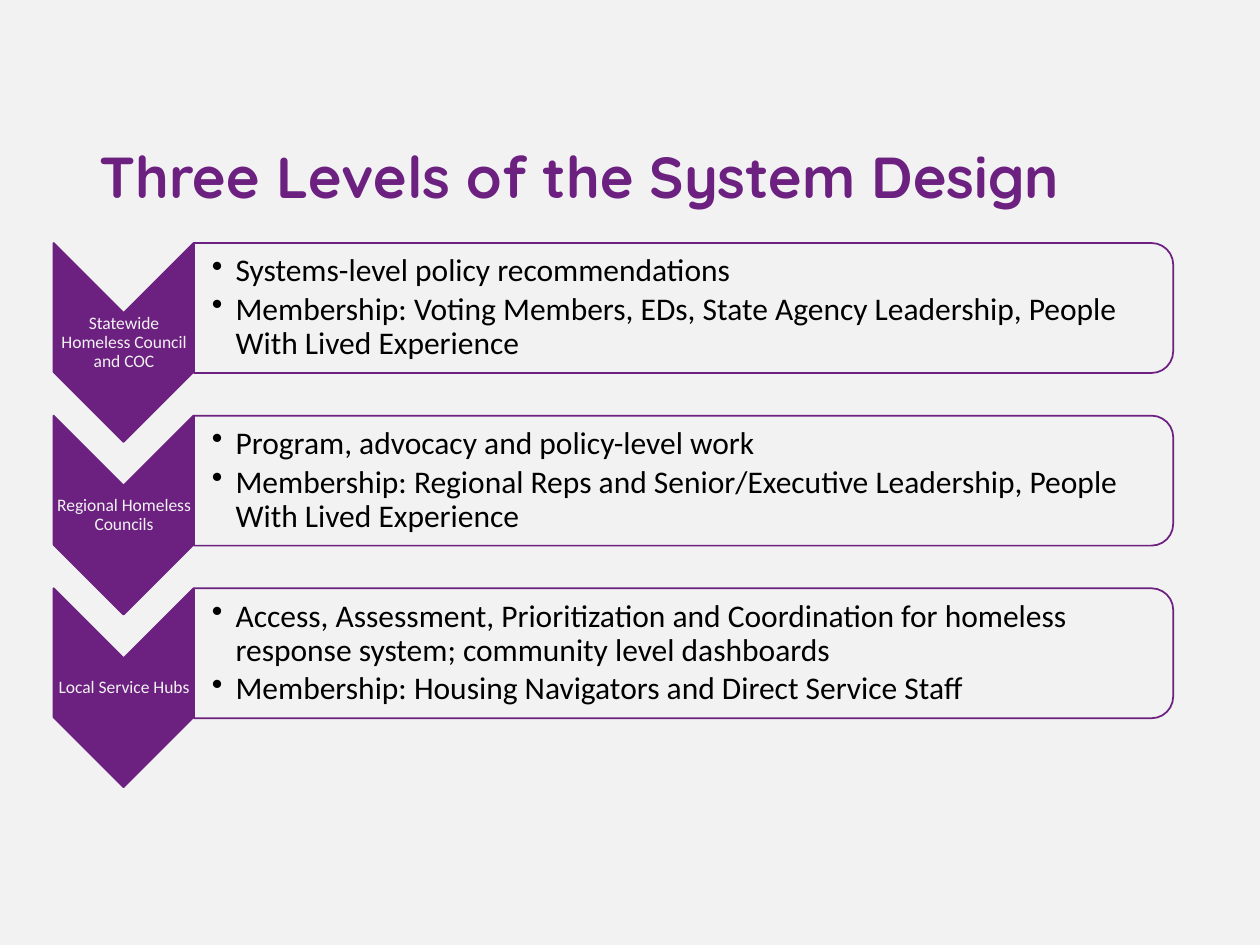
import pptx
import pptx.util
import pptx.dml.color
import pptx.enum.shapes
import pptx.enum.text
import pptx.oxml
import pptx.oxml.ns

Cm = pptx.util.Cm
Pt = pptx.util.Pt
RGB = pptx.dml.color.RGBColor
SHAPE = pptx.enum.shapes.MSO_SHAPE
ALIGN = pptx.enum.text.PP_ALIGN
ANCHOR = pptx.enum.text.MSO_ANCHOR

PURPLE = RGB(0x6C, 0x20, 0x80)
PALE = RGB(0xF2, 0xF2, 0xF2)
BLACK = RGB(0, 0, 0)

LEVELS = [
    ("Statewide Homeless Council and COC",
     ["Systems-level policy recommendations",
      "Membership: Voting Members, EDs, State Agency Leadership, "
      "People With Lived Experience"]),
    ("Regional Homeless Councils",
     ["Program, advocacy and policy-level work",
      "Membership: Regional Reps and Senior/Executive Leadership, "
      "People With Lived Experience"]),
    ("Local Service Hubs",
     ["Access, Assessment, Prioritization and Coordination for homeless "
      "response system; community level dashboards",
      "Membership: Housing Navigators and Direct Service Staff"]),
]
TOP, STEP = 4.9, 3.48


class Deck:
    """Holds the style and the current slide."""
    font = "Calibri"
    head = "Quicksand"

    def __init__(self, slide):
        self.slide = slide
        slide.background.fill.solid()
        slide.background.fill.fore_color.rgb = PALE

    def turned(self, kind, x, y, w, h, fill):
        """Shape turned a quarter right; x, y, w, h is the area it covers."""
        left, top = x + (w - h) / 2, y + (h - w) / 2
        shape = self.slide.shapes.add_shape(
            kind, Cm(left), Cm(top), Cm(h), Cm(w))
        shape.rotation = 90
        shape.shadow.inherit = False
        shape.fill.solid()
        shape.fill.fore_color.rgb = fill
        shape.line.color.rgb = PURPLE
        shape.line.width = Pt(1)
        return shape

    def text(self, x, y, w, h, lines, size, color, font=None, bold=False,
             align=ALIGN.LEFT, inset=0.03, left=None, bullet=False, after=0):
        box = self.slide.shapes.add_textbox(Cm(x), Cm(y), Cm(w), Cm(h))
        frame = box.text_frame
        frame.word_wrap = True
        frame.vertical_anchor = ANCHOR.MIDDLE
        frame.margin_left = Cm(inset if left is None else left)
        frame.margin_right = frame.margin_top = Cm(inset)
        frame.margin_bottom = Cm(inset)
        for i, line in enumerate(lines):
            para = frame.paragraphs[0] if i == 0 else frame.add_paragraph()
            para.text = line
            if bullet:
                self.bullet(para)
            para.alignment = align
            para.line_spacing = 0.9
            para.space_after = Pt(after)
            para.font.name = font or self.font
            para.font.size = Pt(size)
            para.font.bold = bold
            para.font.color.rgb = color

    def bullet(self, para):
        para.level = 1
        props = para._p.get_or_add_pPr()
        props.set("marL", str(Cm(0.48)))
        props.set("indent", str(-Cm(0.48)))
        props.append(pptx.oxml.parse_xml(
            '<a:buChar %s char="•"/>' % pptx.oxml.ns.nsdecls("a")))

    def title(self, words):
        self.text(1.75, 2.59, 21.9, 2.08, [words], 33, PURPLE,
                  font=self.head, bold=True, inset=0.25)

    def level(self, y, name, points):
        # Arrow and its label
        self.turned(SHAPE.CHEVRON, 1.08, y, 2.82, 4.01, PURPLE)
        self.text(1.09, y + 1.4, 2.82, 1.22, [name], 10, PALE,
                  align=ALIGN.CENTER)
        # Bar and its points
        self.turned(SHAPE.ROUND_2_SAME_RECTANGLE, 3.91, y, 19.74, 2.62, PALE)
        self.text(3.91, y + 0.13, 19.61, 2.36, points, 18, BLACK,
                  left=0.36, bullet=True, after=2.7)


def main():
    prs = pptx.Presentation()
    prs.slide_width, prs.slide_height = Cm(25.4), Cm(19.05)
    deck = Deck(prs.slides.add_slide(prs.slide_layouts[6]))
    deck.title("Three Levels of the System Design")
    for i, (name, points) in enumerate(LEVELS):
        deck.level(TOP + i * STEP, name, points)
    prs.save("out.pptx")


if __name__ == "__main__":
    main()
